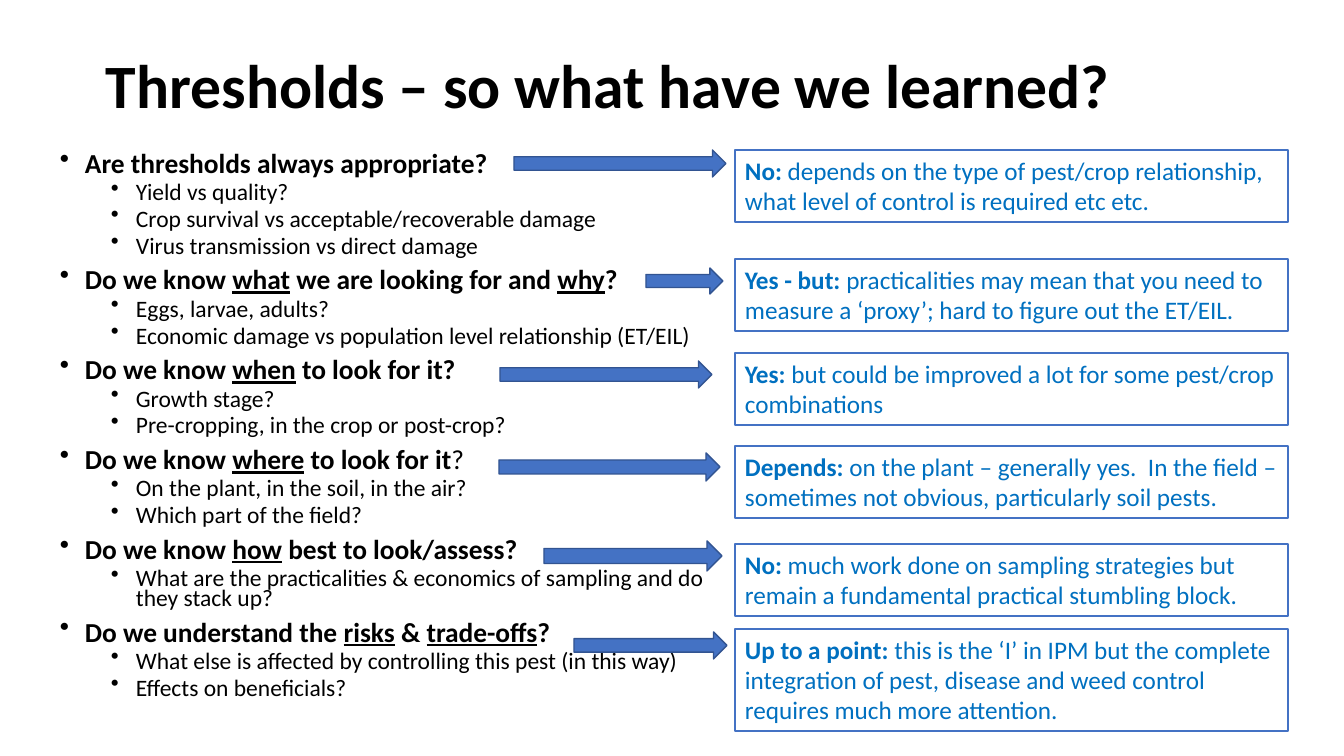
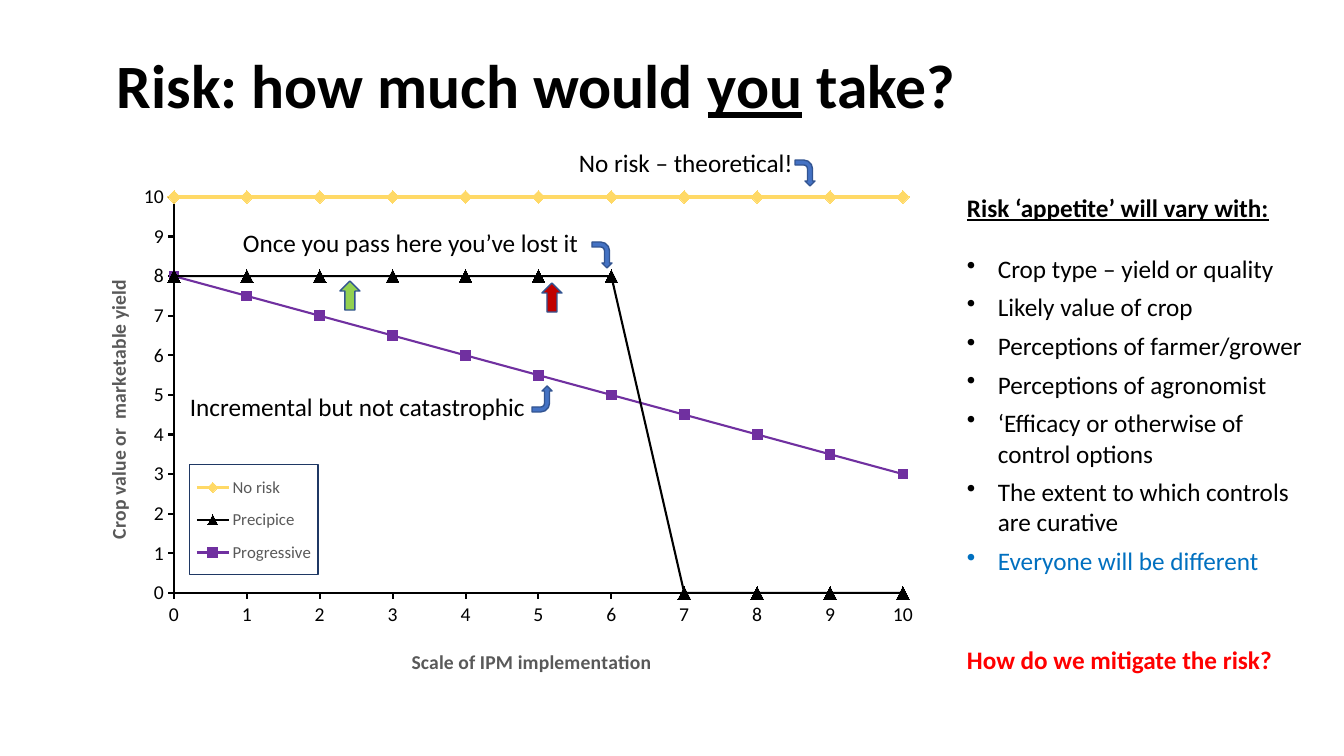
"""Build two slides on pest thresholds and risk appetite."""
from pptx import Presentation
from pptx.chart.data import XyChartData
from pptx.dml.color import RGBColor
from pptx.enum.chart import XL_CHART_TYPE, XL_LEGEND_POSITION, XL_MARKER_STYLE, XL_TICK_MARK
from pptx.enum.shapes import MSO_SHAPE
from pptx.enum.text import MSO_ANCHOR, PP_ALIGN
from pptx.oxml import parse_xml
from pptx.oxml.ns import nsdecls, qn
from pptx.oxml.xmlchemy import OxmlElement
from pptx.util import Emu, Pt

W, H = 1344, 756
FONT = "Calibri"
C = dict(black="000000", blue="4472C4", edge="325491", answer="0070C0", red="FF0000",
         gray="595959", yellow="FFD966", purple="7030A0", green="92D050",
         dark_red="C00000", frame="1F3864")

QUESTIONS = [
    ("Are thresholds always appropriate?",
     ["Yield vs quality?", "Crop survival vs acceptable/recoverable damage",
      "Virus transmission vs direct damage"]),
    ("Do we know _what_ we are looking for and _why_?",
     ["Eggs, larvae, adults?", "Economic damage vs population level relationship (ET/EIL)"]),
    ("Do we know _when_ to look for it?",
     ["Growth stage?", "Pre-cropping, in the crop or post-crop?"]),
    ("Do we know _where_ to look for it|?",
     ["On the plant, in the soil, in the air?", "Which part of the field?"]),
    ("Do we know _how_ best to look/assess?",
     ["What are the practicalities & economics of sampling and do they stack up?"]),
    ("Do we understand the _risks_ & _trade-offs_?",
     ["What else is affected by controlling this pest (in this way)", "Effects on beneficials?"]),
]
ANSWERS = [
    (150, 72, (514, 150, 212, 27), "No: |depends on the type of pest/crop relationship, "
     "what level of control is required etc etc."),
    (259, 72, (646, 268, 77, 26), "Yes - but: |practicalities may mean that you need to "
     "measure a ‘proxy’; hard to figure out the ET/EIL."),
    (353, 72, (500, 361, 212, 27), "Yes: |but could be improved a lot for some pest/crop "
     "combinations"),
    (446, 72, (499, 453, 221, 28), "Depends: |on the plant – generally yes.  In the field – "
     "sometimes not obvious, particularly soil pests."),
    (544, 72, (544, 541, 178, 30), "No: |much work done on sampling strategies but "
     "remain a fundamental practical stumbling block."),
    (629, 102, (574, 632, 153, 27), "Up to a point: |this is the ‘I’ in IPM but the complete "
     "integration of pest, disease and weed control requires much more attention."),
]
FACTORS = ["Crop type – yield or quality", "Likely value of crop",
           "Perceptions of farmer/grower", "Perceptions of agronomist",
           "‘Efficacy or otherwise of control options",
           "The extent to which controls are curative", "Everyone will be different"]
SERIES = [
    ("No risk", [10] * 11, "yellow", 2.25, XL_MARKER_STYLE.DIAMOND, 9),
    ("Precipice", [8] * 7 + [0] * 4, "black", 1.5, XL_MARKER_STYLE.TRIANGLE, 9),
    ("Progressive", [8 - x / 2 for x in range(11)], "purple", 1.5, XL_MARKER_STYLE.SQUARE, 7),
]
CHART = (75, 138, 856, 553)
PLOT, LEGEND = (174, 197, 729, 396), (190, 465, 128, 110)
NOTES = [
    ("No risk – theoretical!", (569, 142, 237, 40), (792, 163, 26, 20), 90),
    ("Once you pass here you’ve lost it", (233, 222, 360, 40), (589, 245, 26, 20), 90),
    ("Incremental but not catastrophic", (180, 386, 359, 40), (529, 389, 26, 20), 270),
]
MARKS = [((340, 281, 20, 29), "green"), ((542, 283, 20, 29), "dark_red")]


def px(n):
    return Emu(round(n * 12192000 / W))


def rgb(name):
    return RGBColor.from_string(C[name])


def assign(obj, **fmt):
    for key, value in fmt.items():
        setattr(obj, key, value)


def style(font, size, color="black", **fmt):
    assign(font, name=FONT, size=Pt(size), **fmt)
    font.color.rgb = rgb(color)


def para(tf, text, size, color="black", bold=False, bullet=None, **fmt):
    """Add a paragraph; _x_ is underlined and text after | is not bold."""
    p = tf.paragraphs[0]
    if p.runs:
        p = tf.add_paragraph()
    if bullet:
        pPr = p._p.get_or_add_pPr()
        pPr.set("marL", str(px(bullet[0])))
        pPr.set("indent", str(-px(bullet[1])))
        bu = OxmlElement("a:buChar")
        bu.set("char", "•")
        pPr.append(bu)
    assign(p, alignment=PP_ALIGN.LEFT, **fmt)
    for i, part in enumerate(text.split("|")):
        for j, piece in enumerate(part.split("_")):
            if piece:
                r = p.add_run()
                r.text = piece
                style(r.font, size, color, bold=bold and i == 0, underline=j % 2 == 1)


def textbox(s, box, wrap=True, anchor=MSO_ANCHOR.TOP):
    tf = s.shapes.add_textbox(*map(px, box)).text_frame
    assign(tf, word_wrap=wrap, vertical_anchor=anchor)
    return tf


def shape(s, kind, box, fill=None, line="edge", width=1):
    sp = s.shapes.add_shape(kind, *map(px, box))
    sp.shadow.inherit = False
    if fill:
        sp.fill.solid()
        sp.fill.fore_color.rgb = rgb(fill)
    else:
        sp.fill.background()
    sp.line.color.rgb = rgb(line)
    sp.line.width = Pt(width)
    return sp


def new_slide(prs, title, box):
    s = prs.slides.add_slide(prs.slide_layouts[6])
    para(textbox(s, box, anchor=MSO_ANCHOR.MIDDLE), title, 44, bold=True, line_spacing=0.9)
    return s


def place(el, index, x, y, w=None, h=None, inner=False):
    """Give a chart part a fixed place, from slide px."""
    left, top, cw, ch = CHART
    for old in el.findall(qn("c:layout")):
        el.remove(old)
    vals = [("layoutTarget", "inner")] if inner else []
    vals += [("xMode", "edge"), ("yMode", "edge"),
             ("x", (x - left) / cw), ("y", (y - top) / ch)]
    if w:
        vals += [("w", w / cw), ("h", h / ch)]
    body = "".join(f'<c:{k} val="{v}"/>' for k, v in vals)
    el.insert(index, parse_xml(f'<c:layout {nsdecls("c")}><c:manualLayout>{body}'
                               '</c:manualLayout></c:layout>'))


def risk_chart(s):
    data = XyChartData()
    for name, values, *_ in SERIES:
        ser = data.add_series(name)
        for point in enumerate(values):
            ser.add_data_point(*point)
    ch = s.shapes.add_chart(XL_CHART_TYPE.XY_SCATTER_LINES, *map(px, CHART), data).chart
    assign(ch, has_title=False, has_legend=True)
    style(ch.font, 10)
    plot = ch.plots[0]
    plot.vary_by_categories = False
    for ser, (_, _, color, width, marker, size) in zip(plot.series, SERIES):
        ser.smooth = False
        assign(ser.marker, style=marker, size=size)
        ser.marker.format.fill.solid()
        ser.marker.format.fill.fore_color.rgb = rgb(color)
        for line in (ser.format.line, ser.marker.format.line):
            line.color.rgb = rgb(color)
        ser.format.line.width = Pt(width)
    for axis, title, spot in ((ch.category_axis, "Scale of IPM implementation", (408, 645)),
                              (ch.value_axis, "Crop value or  marketable yield", (101, 276))):
        assign(axis, minimum_scale=0, maximum_scale=10, major_unit=1, has_major_gridlines=False,
               major_tick_mark=XL_TICK_MARK.OUTSIDE, minor_tick_mark=XL_TICK_MARK.NONE)
        assign(axis.tick_labels, number_format="0", number_format_is_linked=False)
        style(axis.tick_labels.font, 14)
        axis.format.line.color.rgb = rgb("black")
        axis.format.line.width = Pt(1.5)
        tf = axis.axis_title.text_frame
        tf.text = title
        style(tf.paragraphs[0].runs[0].font, 14, "gray", bold=True)
        place(axis.axis_title._element, 1, *spot)
    tf._txBody.find(qn("a:bodyPr")).set("rot", "-5400000")
    lg = ch.legend
    assign(lg, position=XL_LEGEND_POSITION.TOP, include_in_layout=False)
    style(lg.font, 12, "gray")
    lg._element.find(qn("c:txPr")).addprevious(parse_xml(
        f'<c:spPr {nsdecls("c", "a")}><a:ln w="9525"><a:solidFill>'
        f'<a:srgbClr val="{C["frame"]}"/></a:solidFill></a:ln></c:spPr>'))
    place(lg._element, 1, *LEGEND)
    place(ch._chartSpace.chart.plotArea, 0, *PLOT, inner=True)


def thresholds(prs):
    s = new_slide(prs, "Thresholds – so what have we learned?", (96, 42, 1159, 94))
    tf = textbox(s, (50, 150, 685, 570))
    for i, (question, points) in enumerate(QUESTIONS):
        para(tf, question, 19.6, bold=True, bullet=(25, 25), line_spacing=0.7,
             space_before=Pt(9.5 if i else 0))
        for point in points:
            para(tf, point, 16.8, bullet=(76, 25), level=1, line_spacing=0.7,
                 space_before=Pt(5))
    for top, height, arrow, text in ANSWERS:
        sp = shape(s, MSO_SHAPE.RECTANGLE, (735, top, 553, height), line="blue", width=1.5)
        assign(sp.text_frame, word_wrap=True, vertical_anchor=MSO_ANCHOR.TOP)
        para(sp.text_frame, text, 18, "answer", bold=True)
        shape(s, MSO_SHAPE.RIGHT_ARROW, arrow, "blue")


def risk(prs):
    s = new_slide(prs, "Risk: how much would _you_ take?", (107, 16, 1159, 146))
    risk_chart(s)
    tf = textbox(s, (957, 187, 358, 497))
    para(tf, "_Risk ‘appetite’ will vary with:_", 18, bold=True, space_after=Pt(22))
    for factor in FACTORS:
        para(tf, factor, 18, "answer" if factor == FACTORS[-1] else "black",
             bullet=(31, 31), space_after=Pt(6))
    para(tf, "How do we mitigate the risk?", 18, "red", bold=True, space_before=Pt(43))
    for text, box, arrow, turn in NOTES:
        para(textbox(s, box, wrap=False), text, 18)
        sp = shape(s, MSO_SHAPE.BENT_ARROW, arrow, "blue")
        sp.rotation = turn
        if turn == 270:
            sp._element.spPr.find(qn("a:xfrm")).set("flipV", "1")
    for box, color in MARKS:
        shape(s, MSO_SHAPE.UP_ARROW, box, color)


def main():
    prs = Presentation()
    assign(prs, slide_width=px(W), slide_height=px(H))
    thresholds(prs)
    risk(prs)
    prs.save("out.pptx")


if __name__ == "__main__":
    main()
